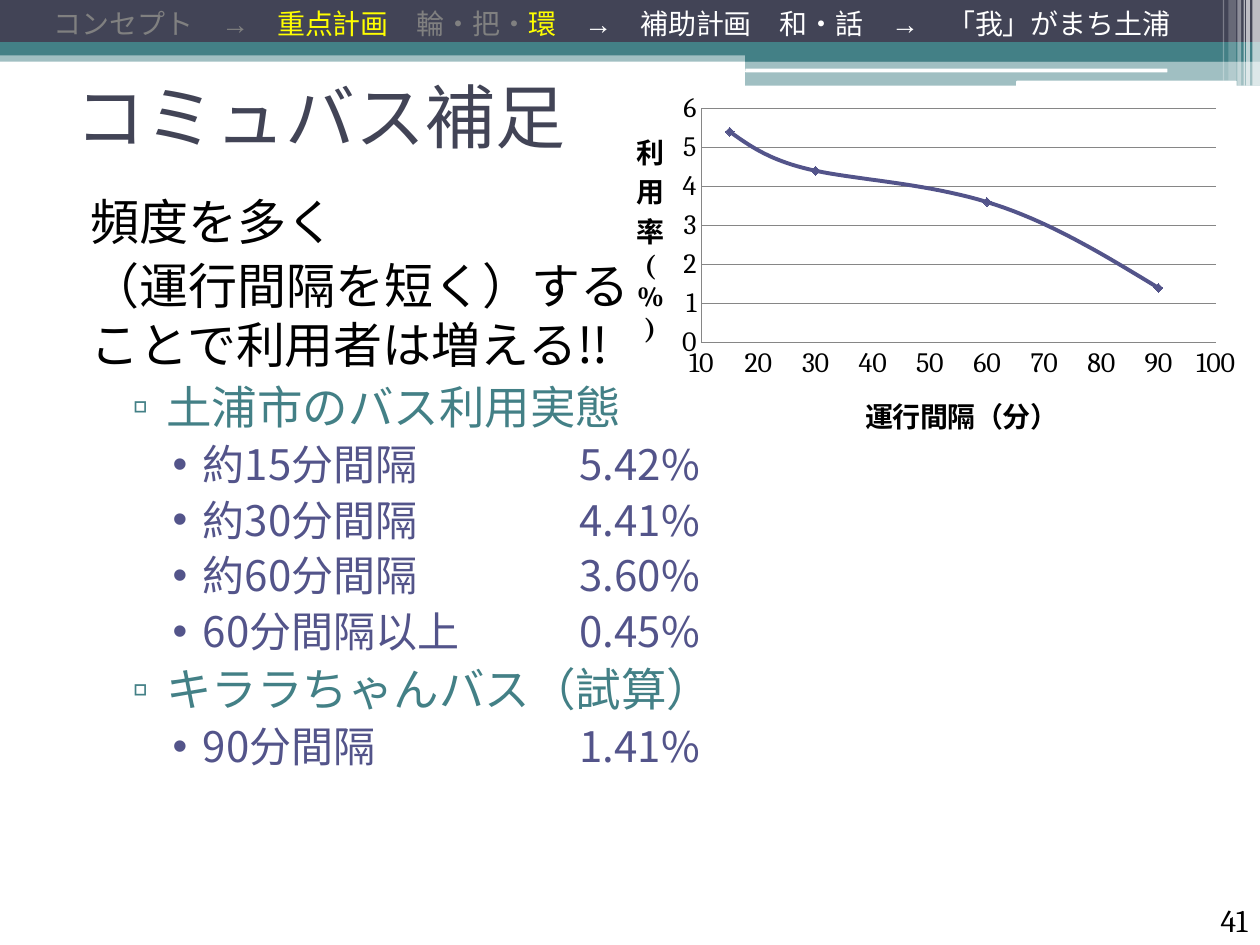
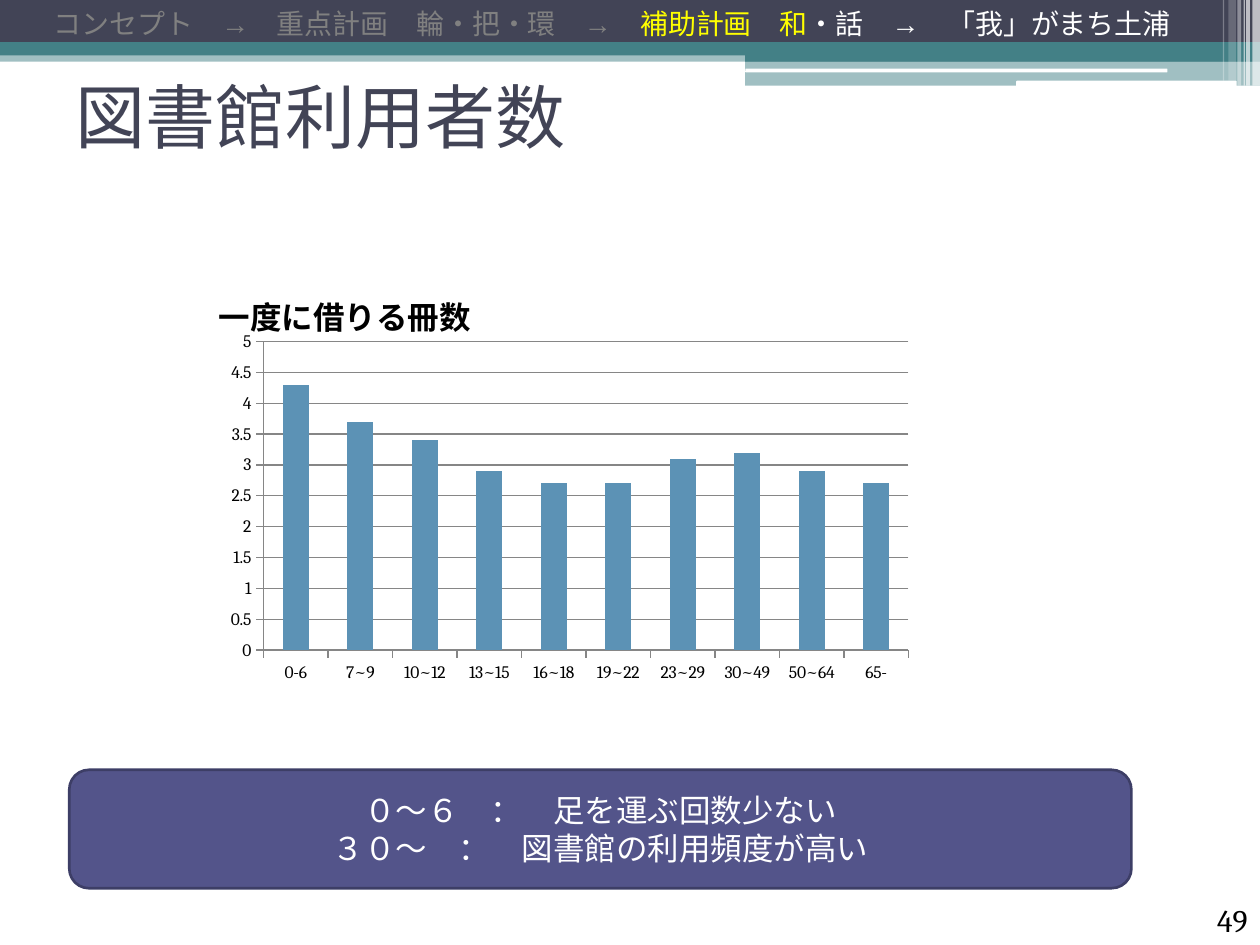
from lxml import etree
from pptx import Presentation
from pptx.chart.data import CategoryChartData, XyChartData
from pptx.dml.color import RGBColor
from pptx.enum.chart import XL_CHART_TYPE, XL_MARKER_STYLE, XL_TICK_MARK
from pptx.enum.shapes import MSO_SHAPE
from pptx.enum.text import MSO_ANCHOR, MSO_AUTO_SIZE, PP_ALIGN
from pptx.oxml.ns import qn
from pptx.util import Inches, Pt

RECT, ROUND = MSO_SHAPE.RECTANGLE, MSO_SHAPE.ROUNDED_RECTANGLE
LEFT, CENTER, RIGHT = PP_ALIGN.LEFT, PP_ALIGN.CENTER, PP_ALIGN.RIGHT
MIDDLE, BOTTOM = MSO_ANCHOR.MIDDLE, MSO_ANCHOR.BOTTOM
FIXED = MSO_AUTO_SIZE.NONE
SCATTER, COLUMNS = XL_CHART_TYPE.XY_SCATTER_SMOOTH, XL_CHART_TYPE.COLUMN_CLUSTERED
DIAMOND = XL_MARKER_STYLE.DIAMOND
NO_TICK, OUTSIDE = XL_TICK_MARK.NONE, XL_TICK_MARK.OUTSIDE

WIDTH, HEIGHT = Inches(10), Inches(7.5)
COLUMN, ROW = WIDTH / 20, HEIGHT / 15
TAB_STEP = Inches(1)

COLORS = {
    "navy": "424456", "teal": "438086", "indigo": "53548A", "edge": "3D3E66",
    "bar": "5C92B5", "grid": "868686", "white": "FFFFFF", "black": "000000",
    "done": "808080", "current": "FFFF00",
}
TITLE_FONT, LATIN_FONT, JAPANESE_FONT, STEPS_FONT = "Cabin", "Cambria", "Noto Sans CJK JP", "Arial"

BANDS = [
    (RECT, (0, 0.8, 20, 0.18), "teal", 50),
    (RECT, (0, 0, 20, 0.68), "navy", 100),
    (RECT, (0, 0.67, 20, 0.21), "teal", 100),
    (RECT, (11.83, 0.78, 8.17, 0.2), "teal", 100),
    (RECT, (11.83, 0.97, 8.17, 0.39), "teal", 50),
    (ROUND, (11.83, 1.09, 6.7, 0.06), "white", 100),
    (ROUND, (16.13, 1.28, 3.5, 0.1), "white", 100),
]
STRIPES = [
    (19.88, 0.12, 1.36, 65), (19.78, 0.06, 1.36, 65), (19.74, 0.02, 1.36, 60),
    (19.64, 0.06, 1.36, 40), (19.5, 0.12, 1.28, 20), (19.41, 0.02, 1.28, 30),
]
BANDS += [(RECT, (column, 0, wide, tall), "white", opacity)
          for column, wide, tall, opacity in STRIPES]

LEVELS = [
    {"margin": 0.12, "hang": 0, "bullet": None, "size": 28, "color": "black"},
    {"margin": 0.72, "hang": 0.27, "bullet": "▫", "size": 26, "color": "teal"},
    {"margin": 1.01, "hang": 0.24, "bullet": "•", "size": 24, "color": "indigo"},
]
BUS_POINTS = [
    (0, "頻度を多く"),
    (0, "（運行間隔を短く）する\vことで利用者は増える!!"),
    (1, "土浦市のバス利用実態"),
    (2, "約15分間隔\t\t5.42%"),
    (2, "約30分間隔\t\t4.41%"),
    (2, "約60分間隔\t\t3.60%"),
    (2, "60分間隔以上\t0.45%"),
    (1, "キララちゃんバス（試算）"),
    (2, "90分間隔\t\t1.41%"),
]
BUS_STEPS = [
    ("コンセプト　→　", "done"), ("重点計画　", "current"), ("輪・把・", "done"),
    ("環", "current"), ("　→　補助計画　和・話　→　「我」がまち土浦", "white"),
]
LIBRARY_STEPS = [
    ("コンセプト　→　重点計画　輪・把・環　→　", "done"),
    ("補助計画　和", "current"), ("・話　→　「我」がまち土浦", "white"),
]
USE_BY_INTERVAL = [(15, 5.4), (30, 4.4), (60, 3.6), (90, 1.4)]
LOANS_BY_AGE = {
    "0-6": 4.3, "7~9": 3.7, "10~12": 3.4, "13~15": 2.9, "16~18": 2.7,
    "19~22": 2.7, "23~29": 3.1, "30~49": 3.2, "50~64": 2.9, "65-": 2.7,
}


def rgb(color):
    return RGBColor.from_string(COLORS[color])


def place(column, row, columns, rows):
    return [round(length) for length in
            (column * COLUMN, row * ROW, columns * COLUMN, rows * ROW)]


def move(placeholder, cells):
    placeholder.left, placeholder.top, placeholder.width, placeholder.height = place(*cells)
    placeholder.text_frame.auto_size = FIXED
    return placeholder.text_frame


def set_font(font, size, name, color):
    font.size, font.name = Pt(size), name
    font.color.rgb = rgb(color)


def set_east_asian_font(paragraph, name):
    defaults = paragraph._p.find(".//" + qn("a:defRPr"))
    etree.SubElement(defaults, qn("a:ea"), typeface=name)


def add_block(slide, kind, cells, color, opacity=100):
    block = slide.shapes.add_shape(kind, *place(*cells))
    block.shadow.inherit = False
    block.fill.solid()
    block.fill.fore_color.rgb = rgb(color)
    block.line.fill.background()
    if opacity < 100:
        tint = block.element.spPr.find(".//" + qn("a:srgbClr"))
        etree.SubElement(tint, qn("a:alpha"), val=str(opacity * 1000))
    return block


def add_bands(master, slide):
    for number, band in enumerate(BANDS, 100):
        block = add_block(slide, *band).element
        block.find(".//" + qn("p:cNvPr")).set("id", str(number))
        master.shapes.element.append(block)


def add_title(slide, text):
    frame = move(slide.shapes.title, (1, 1.04, 18, 1.58))
    frame.vertical_anchor = MIDDLE
    heading = frame.paragraphs[0]
    heading.text, heading.alignment = text, LEFT
    set_font(heading.font, 40, TITLE_FONT, "navy")


def add_steps(slide, steps):
    frame = slide.shapes.add_textbox(*place(0, 0, 19.44, 0.74)).text_frame
    frame.word_wrap = True
    line = frame.paragraphs[0]
    line.alignment = CENTER
    line.font.size, line.font.name = Pt(16), STEPS_FONT
    set_east_asian_font(line, STEPS_FONT)
    for text, color in steps:
        step = line.add_run()
        step.text = text
        step.font.color.rgb = rgb(color)


def add_page_number(slide, number):
    frame = slide.shapes.add_textbox(*place(18.34, 14.2, 1.66, 0.8)).text_frame
    frame.word_wrap, frame.vertical_anchor = True, BOTTOM
    line = frame.paragraphs[0]
    line.text, line.alignment = str(number), RIGHT
    set_font(line.font, 18, LATIN_FONT, "black")


def set_bullet(paragraph, level):
    properties = paragraph._p.get_or_add_pPr()
    properties.set("marL", str(Inches(level["margin"])))
    properties.set("indent", str(-Inches(level["hang"])))
    properties.set("defTabSz", str(TAB_STEP))
    if level["bullet"]:
        tint = etree.SubElement(properties, qn("a:buClr"))
        etree.SubElement(tint, qn("a:srgbClr"), val=COLORS[level["color"]])
        etree.SubElement(properties, qn("a:buChar"), char=level["bullet"])
    else:
        etree.SubElement(properties, qn("a:buNone"))


def add_points(slide, cells, points):
    frame = move(slide.placeholders[1], cells)
    for index, (depth, text) in enumerate(points):
        point = frame.add_paragraph() if index else frame.paragraphs[0]
        level = LEVELS[depth]
        point.text, point.level, point.alignment = text, depth, LEFT
        set_bullet(point, level)
        point.space_before = Pt(3 if index else 0)
        set_font(point.font, level["size"], JAPANESE_FONT, level["color"])
        set_east_asian_font(point, JAPANESE_FONT)


def set_layout(part, left, top, wide=None, tall=None):
    layout = part.find(qn("c:layout"))
    if layout is None:
        layout = etree.Element(qn("c:layout"))
        part.insert(0 if part.find(qn("c:tx")) is None else 1, layout)
    manual = etree.SubElement(layout, qn("c:manualLayout"))
    values = [("xMode", "edge"), ("yMode", "edge"), ("x", left), ("y", top)]
    if wide:
        values = [("layoutTarget", "inner")] + values + [("w", wide), ("h", tall)]
    for name, value in values:
        etree.SubElement(manual, qn("c:" + name), val=str(value))


def set_chart_title(title, text, size, name, corner):
    line = title.text_frame.paragraphs[0]
    line.text = text
    set_font(line.font, size, name, "black")
    line.font.bold = True
    set_layout(title.element, *corner)


def set_axis(axis, size, tick, scale=None):
    axis.major_tick_mark, axis.minor_tick_mark = tick, NO_TICK
    axis.tick_labels.font.size = Pt(size)
    axis.format.line.color.rgb = rgb("grid")
    if scale:
        axis.minimum_scale, axis.maximum_scale, axis.major_unit = scale


def add_chart(slide, kind, cells, data, plot_area):
    chart = slide.shapes.add_chart(kind, *place(*cells), data).chart
    set_font(chart.font, 10, LATIN_FONT, "black")
    chart.has_legend = chart.has_title = False
    chart.plots[0].vary_by_categories = False
    chart.category_axis.has_major_gridlines = False
    chart.value_axis.has_major_gridlines = True
    chart.value_axis.major_gridlines.format.line.color.rgb = rgb("grid")
    set_layout(chart.element.find(".//" + qn("c:plotArea")), *plot_area)
    return chart


def add_interval_chart(slide):
    data = XyChartData()
    usage = data.add_series("Series 1")
    for minutes, rate in USE_BY_INTERVAL:
        usage.add_data_point(minutes, rate)
    chart = add_chart(slide, SCATTER, (9.72, 1.36, 10.08, 6), data, (0.14, 0.06, 0.81, 0.62))
    interval, rate = chart.category_axis, chart.value_axis
    set_axis(interval, 16, NO_TICK, (10, 100, 10))
    set_axis(rate, 16, NO_TICK, (0, 6, 1))
    set_chart_title(interval.axis_title, "運行間隔（分）", 16, LATIN_FONT, (0.39, 0.8))
    set_chart_title(rate.axis_title, "利用率(%)", 16, LATIN_FONT, (0.03, 0.1))
    stacking = rate.axis_title.element.find(".//" + qn("a:bodyPr"))
    stacking.set("rot", "0")
    stacking.set("vert", "wordArtVert")
    chart.element.find(".//" + qn("c:smooth")).set("val", "1")
    curve = chart.plots[0].series[0]
    curve.format.line.color.rgb = rgb("indigo")
    curve.format.line.width = Pt(2.25)
    curve.marker.style, curve.marker.size = DIAMOND, 5
    curve.marker.format.fill.solid()
    curve.marker.format.fill.fore_color.rgb = rgb("indigo")
    curve.marker.format.line.color.rgb = rgb("indigo")


def add_loans_chart(slide):
    name = "一度に借りる冊数"
    data = CategoryChartData()
    data.categories = list(LOANS_BY_AGE)
    data.add_series(name, list(LOANS_BY_AGE.values()))
    chart = add_chart(slide, COLUMNS, (3.38, 4.5, 11.5, 7.1), data, (0.07, 0.13, 0.89, 0.69))
    chart.has_title = True
    set_chart_title(chart.chart_title, name, 18, JAPANESE_FONT, (0, 0))
    set_axis(chart.category_axis, 10, OUTSIDE)
    set_axis(chart.value_axis, 10, OUTSIDE, (0, 5, 0.5))
    chart.plots[0].gap_width = 150
    bars = chart.plots[0].series[0].format.fill
    bars.solid()
    bars.fore_color.rgb = rgb("bar")


def add_summary(slide, cells, lines):
    panel = add_block(slide, ROUND, cells, "indigo")
    panel.line.color.rgb = rgb("edge")
    panel.line.width = Pt(1.5)
    frame = panel.text_frame
    frame.vertical_anchor = MIDDLE
    frame.text = "\n".join(lines)
    for line in frame.paragraphs:
        line.alignment = CENTER
        set_font(line.font, 18, JAPANESE_FONT, "white")
        set_east_asian_font(line, JAPANESE_FONT)


def add_slide(deck, layout, title, steps, number):
    slide = deck.slides.add_slide(deck.slide_layouts.get_by_name(layout))
    add_title(slide, title)
    add_steps(slide, steps)
    add_page_number(slide, number)
    return slide


def main():
    deck = Presentation()
    deck.slide_width, deck.slide_height = WIDTH, HEIGHT

    bus = add_slide(deck, "Title and Content", "コミュバス補足", BUS_STEPS, 41)
    add_bands(deck.slide_master, bus)
    add_points(bus, (1, 2.94, 10.58, 11.44), BUS_POINTS)
    add_interval_chart(bus)

    library = add_slide(deck, "Title Only", "図書館利用者数", LIBRARY_STEPS, 49)
    add_summary(library, (1.1, 12.22, 16.86, 1.88),
                ["０～６　：　足を運ぶ回数少ない", "３０～　：　図書館の利用頻度が高い"])
    add_loans_chart(library)

    deck.save("out.pptx")


if __name__ == "__main__":
    main()
